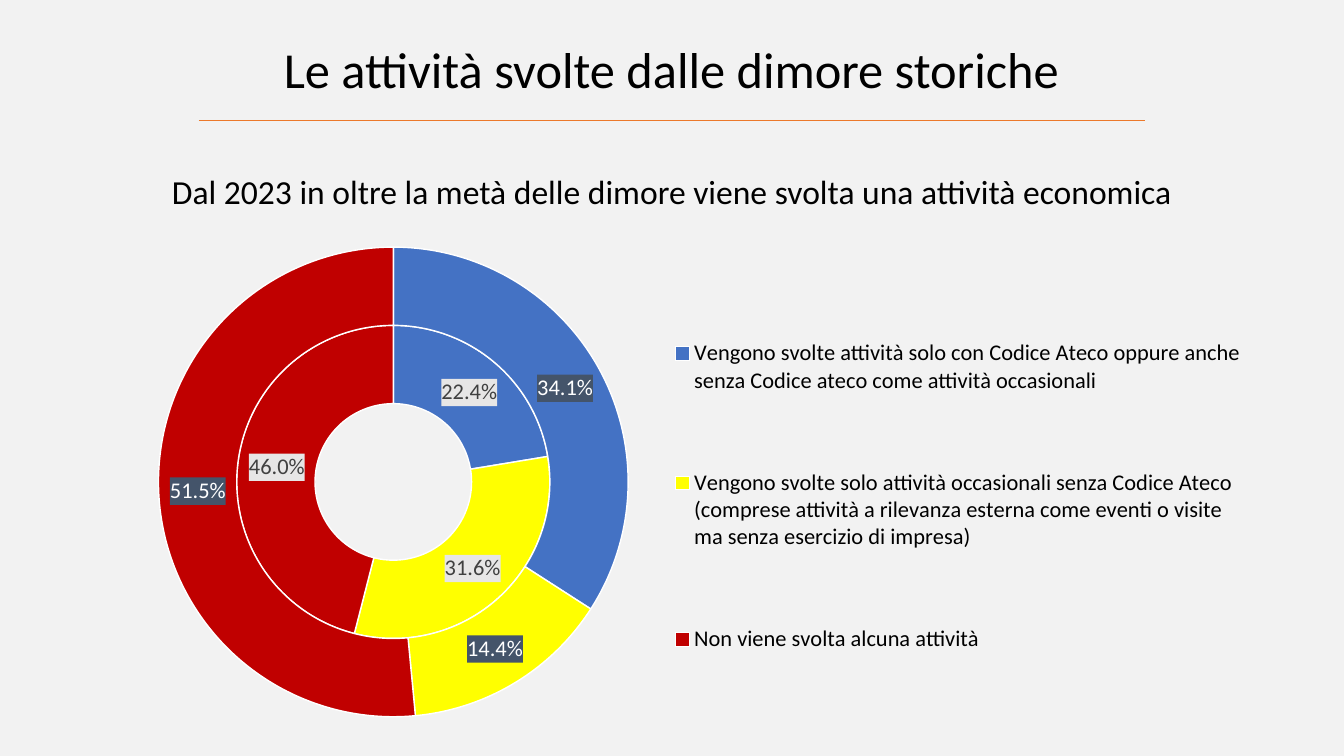
from lxml.etree import SubElement
from pptx import Presentation
from pptx.chart.data import CategoryChartData
from pptx.dml.color import RGBColor
from pptx.enum.chart import XL_CHART_TYPE, XL_LEGEND_POSITION
from pptx.enum.shapes import MSO_CONNECTOR
from pptx.enum.text import MSO_ANCHOR, PP_ALIGN
from pptx.oxml import parse_xml
from pptx.oxml.ns import nsdecls, qn
from pptx.util import Pt

FONT = "Calibri"
BLACK, WHITE, BACKGROUND, RULE = "000000", "FFFFFF", "F2F2F2", "EC792B"
SLIDE_SIZE = (1344, 756)
EMU_PER_PX = 914400 * 20 / 1344

TEXTS = [
    ("Le attività svolte dalle dimore storiche", 54, (110, 34, 1123, 68), MSO_ANCHOR.MIDDLE),
    ("Dal 2023 in oltre la metà delle dimore viene svolta una attività economica",
     36, (95, 136, 1154, 79), MSO_ANCHOR.BOTTOM),
]
TITLE_RULE = (199, 120, 1145, 120)
CHART_BOX = (95, 230, 1154, 503)
PLOT_LAYOUT = (0.055, 0.034, 0.407, 0.934)
LEGEND_LAYOUT = (0.5, 0.07, 0.5, 0.92)
ACTIVITIES = [
    ("Vengono svolte attività solo con Codice Ateco oppure anche senza Codice ateco "
     "come attività occasionali", "4472C4"),
    ("Vengono svolte solo attività occasionali senza Codice Ateco (comprese attività a "
     "rilevanza esterna come eventi o visite ma senza esercizio di impresa)", "FFFF00"),
    ("Non viene svolta alcuna attività", "C00000"),
]
RINGS = [
    ("Series 1", (0.224, 0.316, 0.46), "404040", "E7E6E6"),
    ("Series 2", (0.341, 0.144, 0.515), WHITE, "44546A"),
]


def px(*lengths):
    """Turn px lengths into EMU."""
    return [round(length * EMU_PER_PX) for length in lengths]


def color(value):
    """Turn a hex string into a colour."""
    return RGBColor.from_string(value)


def style_font(font, size, value):
    """Set typeface, size and colour."""
    font.name = FONT
    font.size = Pt(size)
    font.color.rgb = color(value)


def add_text(slide, text, size, box, anchor):
    """Add one centred line of text."""
    frame = slide.shapes.add_textbox(*px(*box)).text_frame
    frame.word_wrap = True
    frame.vertical_anchor = anchor
    frame.text = text
    paragraph = frame.paragraphs[0]
    paragraph.alignment = PP_ALIGN.CENTER
    style_font(paragraph.runs[0].font, size, BLACK)


def add_rule(slide):
    """Add the thin line under the title."""
    line = slide.shapes.add_connector(MSO_CONNECTOR.STRAIGHT, *px(*TITLE_RULE))
    line.line.color.rgb = color(RULE)
    line.line.width = Pt(0.75)
    SubElement(line._element.spPr, qn("a:effectLst"))


def set_layout(parent, index, box, target=""):
    """Place a chart part by fractions of the chart."""
    for layout in parent.findall(qn("c:layout")):
        parent.remove(layout)
    modes = '<c:xMode val="edge"/><c:yMode val="edge"/>'
    sizes = "".join(f'<c:{name} val="{value}"/>' for name, value in zip("xywh", box))
    parent.insert(index, parse_xml(
        f'<c:layout {nsdecls("c")}><c:manualLayout>{target}{modes}{sizes}'
        "</c:manualLayout></c:layout>"))


def style_ring(series, label_color, label_fill):
    """Colour the slices and labels of one ring."""
    for index, (_, value) in enumerate(ACTIVITIES):
        slice_format = series.points[index].format
        slice_format.fill.solid()
        slice_format.fill.fore_color.rgb = color(value)
        slice_format.line.color.rgb = color(WHITE)
        slice_format.line.width = Pt(1.5)
    labels = series.data_labels
    labels.show_value = True
    labels.show_percentage = False
    labels.number_format = "0.0%"
    labels.number_format_is_linked = False
    style_font(labels.font, 24, label_color)
    labels._element.find(qn("c:txPr")).addprevious(parse_xml(
        f'<c:spPr {nsdecls("c", "a")}><a:solidFill><a:srgbClr val="{label_fill}"/>'
        "</a:solidFill></c:spPr>"))


def add_rings(slide):
    """Add the two-ring doughnut chart with its legend."""
    data = CategoryChartData(number_format="0.0%")
    data.categories = [name for name, _ in ACTIVITIES]
    for name, values, *_ in RINGS:
        data.add_series(name, values)
    chart = slide.shapes.add_chart(XL_CHART_TYPE.DOUGHNUT, *px(*CHART_BOX), data).chart
    chart.has_title = False
    style_font(chart.font, 24, BLACK)
    plot = chart.plots[0]
    plot.vary_by_categories = True
    for series, (_, _, label_color, label_fill) in zip(plot.series, RINGS):
        style_ring(series, label_color, label_fill)
    chart.has_legend = True
    legend = chart.legend
    legend.position = XL_LEGEND_POSITION.RIGHT
    legend.include_in_layout = False
    style_font(legend.font, 24, BLACK)
    set_layout(legend._element, 1, LEGEND_LAYOUT)
    plot_area = chart._chartSpace.chart.plotArea
    set_layout(plot_area, 0, PLOT_LAYOUT, '<c:layoutTarget val="inner"/>')
    plot_area.find(f'.//{qn("c:holeSize")}').set("val", "75")


def main():
    """Build and save the slide."""
    presentation = Presentation()
    presentation.slide_width, presentation.slide_height = px(*SLIDE_SIZE)
    slide = presentation.slides.add_slide(presentation.slide_layouts[6])
    slide.background.fill.solid()
    slide.background.fill.fore_color.rgb = color(BACKGROUND)
    for text in TEXTS:
        add_text(slide, *text)
    add_rule(slide)
    add_rings(slide)
    presentation.save("out.pptx")


if __name__ == "__main__":
    main()
